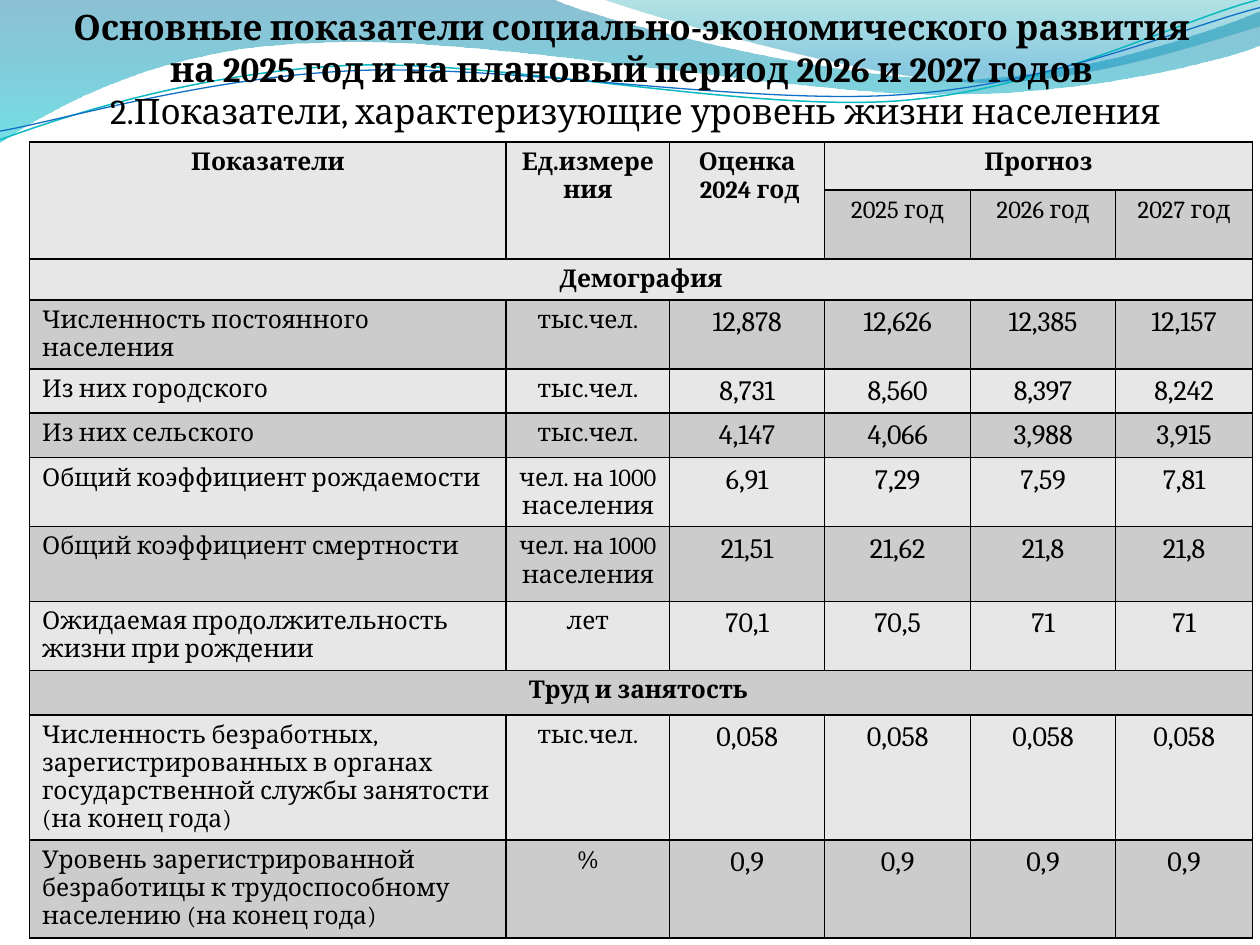
from lxml import etree
from pptx import Presentation
from pptx.dml.color import RGBColor
from pptx.enum.text import MSO_ANCHOR as Anchor, PP_ALIGN as Align
from pptx.oxml.ns import qn
from pptx.util import Pt

FONT = "Cambria"
BLACK = "000000"
BANDS = ("E7E7E7", "CCCCCC")

# Each curve is two control points and an end point.
LOWER_WAVE = [(0, 0), (316.8, 0),
              [(342.7, 12.2), (478.1, 45.4), (545.8, 45.4)],
              [(614.2, 45.4), (689.8, 18.7), (720, 6.5)],
              (720, 25.9),
              [(707.8, 31.7), (626.4, 54.7), (537.1, 54)],
              [(447.8, 54), (275, 20.2), (185, 24.5)],
              [(92.9, 25.9), (33.1, 59.8), (0, 81.4)]]
UPPER_WAVE = [(344.9, 0),
              [(366.5, 7.9), (491, 44.6), (553.7, 46.8)],
              [(616.3, 49.7), (691.9, 23), (720, 15.1)],
              (720, 0)]
TEAL_LINE = [(0, 79.9),
             [(34.6, 67), (113.8, 41), (199.4, 37.4)],
             [(284.4, 33.8), (427, 64.1), (513.4, 57.6)],
             [(599.8, 51.1), (675.4, 10.8), (718.6, 0)]]
BLUE_LINE = [(0, 74.9),
             [(33.8, 69.1), (118.1, 43.9), (203.8, 40.3)],
             [(290.2, 36.7), (429.8, 60.5), (516.2, 54)],
             [(601.9, 48.2), (677.5, 15.1), (720, 4.3)]]

TITLE = ["Основные показатели социально-экономического развития ",
         "на 2025 год и на плановый период 2026 и 2027 годов ",
         "2.Показатели, характеризующие уровень жизни населения"]

COLUMN_WIDTHS = [272.4, 93.4, 88.6, 83.4, 82.8, 78.4]
ROW_HEIGHTS = [27.4, 39.4, 23.4, 39.4, 25.4, 25.4, 39.4, 42.8, 39.4, 25.4, 71.6, 56]
ROWS = [
    ["Показатели", "Ед.измере\nния", "Оценка\n 2024 год", "Прогноз"],
    ["", "", "", "2025 год", "2026 год", "2027 год"],
    ["Демография"],
    ["Численность постоянного населения", "тыс.чел.", "12,878", "12,626", "12,385", "12,157"],
    ["Из них городского", "тыс.чел.", "8,731", "8,560", "8,397", "8,242"],
    ["Из них сельского", "тыс.чел.", "4,147", "4,066", "3,988", "3,915"],
    ["Общий коэффициент рождаемости", "чел. на 1000 населения", "6,91", "7,29", "7,59", "7,81"],
    ["Общий коэффициент смертности", "чел. на 1000 населения", "21,51", "21,62", "21,8", "21,8"],
    ["Ожидаемая продолжительность жизни при рождении", "лет", "70,1", "70,5", "71", "71"],
    ["Труд и занятость "],
    ["Численность безработных, зарегистрированных в органах государственной службы "
     "занятости\n(на конец года)", "тыс.чел.", "0,058", "0,058", "0,058", "0,058"],
    ["Уровень зарегистрированной безработицы к трудоспособному населению (на конец года)",
     "%", "0,9", "0,9", "0,9", "0,9"],
]
HEADER_ROWS = 2


def color(code):
    return RGBColor.from_string(code)


def format_span(span, size, bold):
    for name, value in {"name": FONT, "size": Pt(size), "bold": bold}.items():
        setattr(span.font, name, value)
    span.font.color.rgb = color(BLACK)


def add_outline(page, outline, close):
    """Build the outline through its end points, then bend the curved segments."""
    ends = [part[-1] if isinstance(part, list) else part for part in outline]
    start, *rest = [(Pt(x), Pt(y)) for x, y in ends]
    builder = page.shapes.build_freeform(*start)
    builder.add_line_segments(rest, close=close)
    shape = builder.convert_to_shape()
    shape.shadow.inherit = False
    segments = list(shape._element.spPr.iter(qn("a:lnTo")))
    for segment, part in zip(segments, outline[1:]):
        if isinstance(part, list):
            curve = etree.Element(qn("a:cubicBezTo"))
            for x, y in part:
                etree.SubElement(curve, qn("a:pt"), x=str(Pt(x) - shape.left),
                                 y=str(Pt(y) - shape.top))
            segment.getparent().replace(segment, curve)
    return shape


def add_wave(page, outline, stops):
    """Draw a wave with a downward gradient; stops are (position, color, opacity %)."""
    wave = add_outline(page, outline, True)
    wave.line.fill.background()
    wave.fill.gradient()
    wave.fill.gradient_angle = 270
    for stop, (position, code, _) in zip(wave.fill.gradient_stops, stops):
        stop.position = position
        stop.color.rgb = color(code)
    tints = wave._element.spPr.iter(qn("a:srgbClr"))
    for tint, (_, _, opacity) in zip(tints, stops):
        etree.SubElement(tint, qn("a:alpha"), val=str(opacity * 1000))


def add_curve(page, outline, code, width):
    curve = add_outline(page, outline, False)
    curve.fill.background()
    curve.line.color.rgb = color(code)
    curve.line.width = Pt(width)


def add_title(page):
    box = page.shapes.add_textbox(Pt(20), Pt(-24.6), Pt(686), Pt(99.8))
    settings = {"word_wrap": True, "vertical_anchor": Anchor.BOTTOM, "margin_left": 0,
                "margin_right": 0, "margin_top": Pt(3.6), "margin_bottom": 0}
    for name, value in settings.items():
        setattr(box.text_frame, name, value)
    para = box.text_frame.paragraphs[0]
    para.alignment = Align.CENTER
    for index, line in enumerate(TITLE):
        if index:
            para.add_line_break()
        span = para.add_run()
        span.text = line
        format_span(span, 20, line != TITLE[-1])


def add_borders(cell):
    properties = cell._tc.get_or_add_tcPr()
    for side in ("lnL", "lnR", "lnT", "lnB"):
        border = etree.SubElement(properties, qn(f"a:{side}"), w=str(Pt(1)))
        fill = etree.SubElement(border, qn("a:solidFill"))
        etree.SubElement(fill, qn("a:srgbClr"), val=BLACK)


def fill_cell(cell, text, size, bold, alignment):
    cell.text = text
    for para in cell.text_frame.paragraphs:
        para.alignment = alignment
        for span in para.runs:
            format_span(span, size, bold)


def add_indicators(page):
    table = page.shapes.add_table(len(ROWS), len(COLUMN_WIDTHS), Pt(16.9), Pt(81.2),
                                  Pt(sum(COLUMN_WIDTHS)), Pt(sum(ROW_HEIGHTS))).table
    for column, width in zip(table.columns, COLUMN_WIDTHS):
        column.width = Pt(width)
    for row, height in zip(table.rows, ROW_HEIGHTS):
        row.height = Pt(height)

    last = len(COLUMN_WIDTHS) - 1
    for column in range(3):
        table.cell(0, column).merge(table.cell(1, column))
    table.cell(0, 3).merge(table.cell(0, last))

    for r, texts in enumerate(ROWS):
        is_section = len(texts) == 1
        if is_section:
            table.cell(r, 0).merge(table.cell(r, last))
        for c in range(last + 1):
            cell = table.cell(r, c)
            add_borders(cell)
            cell.margin_bottom = 0
            cell.fill.solid()
            cell.fill.fore_color.rgb = color(BANDS[r % 2])
        for c, text in enumerate(texts):
            if not text:
                continue
            in_body = r >= HEADER_ROWS and not is_section
            fill_cell(table.cell(r, c), text,
                      size=16 if in_body and c > 1 else 14,
                      bold=r == 0 or is_section,
                      alignment=Align.LEFT if in_body and c == 0 else Align.CENTER)


def main():
    deck = Presentation()
    deck.slide_width, deck.slide_height = Pt(720), Pt(540)
    page = deck.slides.add_slide(deck.slide_layouts[6])
    add_wave(page, LOWER_WAVE, [(0, "0074A1", 45), (1, "00C6CF", 55)])
    add_wave(page, UPPER_WAVE, [(0, "00A1A9", 30), (0.8, "008BBF", 45)])
    add_curve(page, TEAL_LINE, "0AB8BF", 0.85)
    add_curve(page, BLUE_LINE, "0F6FC6", 0.75)
    add_title(page)
    add_indicators(page)
    deck.save("out.pptx")


if __name__ == "__main__":
    main()
